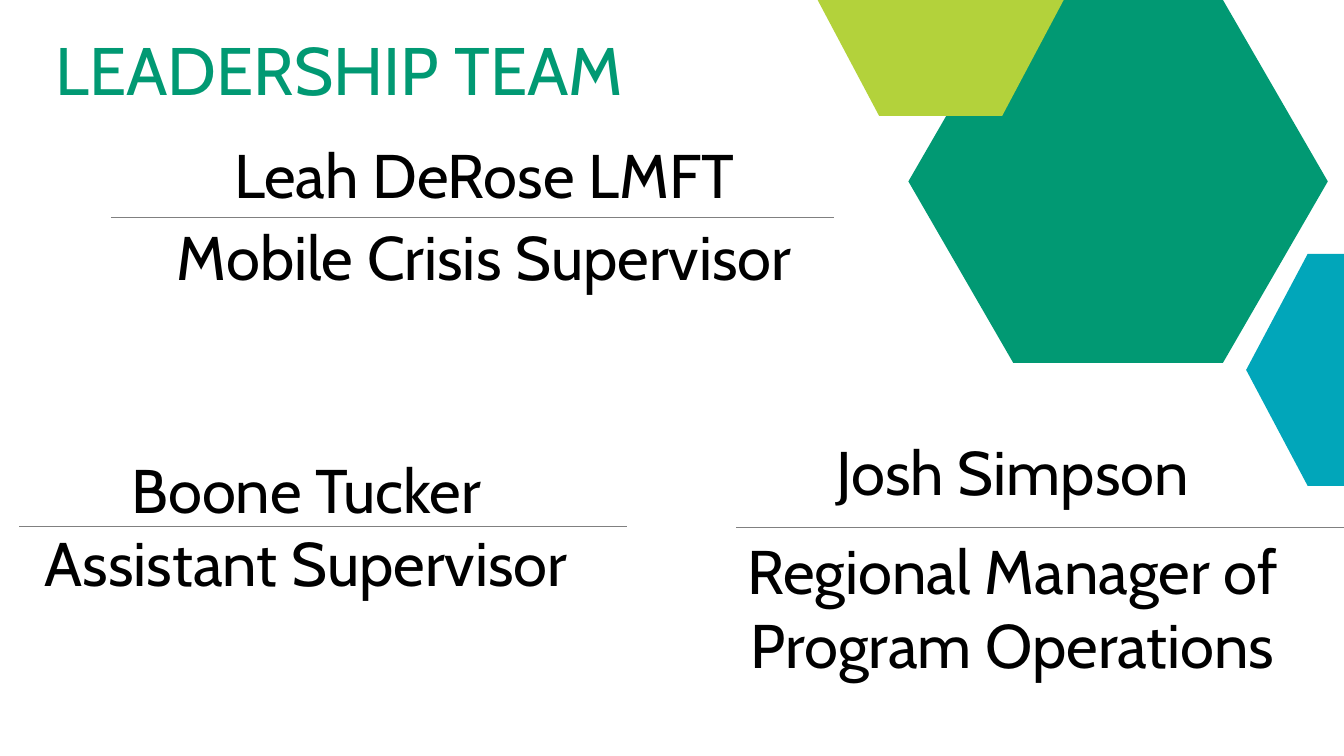
from dataclasses import dataclass
from typing import Optional

import pptx
import pptx.dml.color
import pptx.enum.shapes
import pptx.enum.text
import pptx.oxml
import pptx.oxml.ns
import pptx.util
from pptx.util import Inches

COLORS = {
    "green": "019973",
    "blue": "01A6BA",
    "lime": "B3D23B",
    "black": "000000",
    "gray": "808080",
}
FONT = "Cabin"


@dataclass
class Hexagon:
    left: float
    top: float
    width: float
    height: float
    color: str


@dataclass
class Rule:
    left: float
    right: float
    y: float


@dataclass
class Line:
    text: str
    exact: Optional[float] = None  # line height in points
    after: float = 0


@dataclass
class Member:
    left: float
    top: float
    width: float
    height: float
    lines: list[Line]
    in_body: bool = False


HEXAGONS = [
    Hexagon(9.01, 0, 4.16, 3.6, "green"),
    Hexagon(12.36, 2.52, 2.44, 2.3, "blue"),
    Hexagon(8.11, -1.15, 2.44, 2.3, "lime"),
]
RULES = [Rule(7.3, 13.33, 5.23), Rule(1.1, 8.27, 2.16), Rule(0.19, 6.22, 5.22)]
MEMBERS = [
    Member(5.95, 4.43, 8.19, 2.5,
           [Line("Josh Simpson", 40, 18),
            Line("Regional Manager of\vProgram Operations", None, 18)], in_body=True),
    Member(0.05, 1.49, 9.51, 1.58,
           [Line("Leah DeRose LMFT", 40, 18), Line("Mobile Crisis Supervisor", 40, 18)]),
    Member(0.31, 4.43, 5.46, 1.58,
           [Line("Boone Tucker"), Line("Assistant Supervisor")]),
]


def rgb(name: str) -> pptx.dml.color.RGBColor:
    return pptx.dml.color.RGBColor.from_string(COLORS[name])


def write(para, text: str, *, size: float = 44, color: str = "black",
          align: str = "CENTER", exact: Optional[float] = None,
          after: float = 0, indent: float = 0) -> None:
    """Fill one paragraph with formatted, unbulleted text."""
    para.text = text
    properties = para._p.get_or_add_pPr()
    properties.set("marL", str(Inches(indent)))
    properties.set("indent", "0")
    properties.append(pptx.oxml.parse_xml(
        f'<a:buNone {pptx.oxml.ns.nsdecls("a")}/>'))
    para.alignment = getattr(pptx.enum.text.PP_ALIGN, align)
    para.line_spacing = pptx.util.Pt(exact) if exact else 1.0
    para.space_before = pptx.util.Pt(0)
    para.space_after = pptx.util.Pt(after)
    for span in para.runs:
        span.font.name = FONT
        span.font.size = pptx.util.Pt(size)
        span.font.color.rgb = rgb(color)


def place(box, left: float, top: float, width: float, height: float, anchor: str):
    """Position a text shape and return its prepared text frame."""
    box.left, box.top = Inches(left), Inches(top)
    box.width, box.height = Inches(width), Inches(height)
    frame = box.text_frame
    frame.word_wrap = True
    frame.auto_size = pptx.enum.text.MSO_AUTO_SIZE.NONE
    frame.vertical_anchor = getattr(pptx.enum.text.MSO_ANCHOR, anchor)
    return frame


def draw_hexagon(page, item: Hexagon) -> None:
    # Corners lie at quarters of the width and halves of the height
    corners = [(Inches(item.left + item.width * x), Inches(item.top + item.height * y))
               for x, y in [(1, .5), (.75, 1), (.25, 1), (0, .5), (.25, 0), (.75, 0)]]
    builder = page.shapes.build_freeform(*corners[0])
    builder.add_line_segments(corners[1:], close=True)
    shape = builder.convert_to_shape()
    shape.shadow.inherit = False
    shape.fill.solid()
    shape.fill.fore_color.rgb = rgb(item.color)
    shape.line.fill.background()


def draw_rule(page, rule: Rule) -> None:
    connector = page.shapes.add_connector(
        pptx.enum.shapes.MSO_CONNECTOR.STRAIGHT,
        Inches(rule.left), Inches(rule.y), Inches(rule.right), Inches(rule.y))
    connector.line.color.rgb = rgb("gray")
    connector.line.width = pptx.util.Pt(0.75)
    connector._element.spPr.append(pptx.oxml.parse_xml(
        f'<a:effectLst {pptx.oxml.ns.nsdecls("a")}/>'))


def draw_member(page, member: Member) -> None:
    box = page.placeholders[1] if member.in_body else page.shapes.add_textbox(0, 0, 0, 0)
    frame = place(box, member.left, member.top, member.width, member.height, "TOP")
    for number, line in enumerate(member.lines):
        para = frame.add_paragraph() if number else frame.paragraphs[0]
        write(para, line.text, exact=line.exact, after=line.after)


def main() -> None:
    deck = pptx.Presentation()
    deck.slide_width, deck.slide_height = Inches(13.33), Inches(7.5)
    page = deck.slides.add_slide(deck.slide_layouts[1])

    # Decorative hexagons
    for item in HEXAGONS:
        draw_hexagon(page, item)

    # Title
    frame = place(page.shapes.title, 0.33, 0, 13, 1.37, "MIDDLE")
    write(frame.paragraphs[0], "LEADERSHIP TEAM", size=48, color="green",
          align="LEFT", indent=0.12)

    # Team members and the rules between name and role
    for member in MEMBERS:
        draw_member(page, member)
    for rule in RULES:
        draw_rule(page, rule)

    deck.save("out.pptx")


if __name__ == "__main__":
    main()
